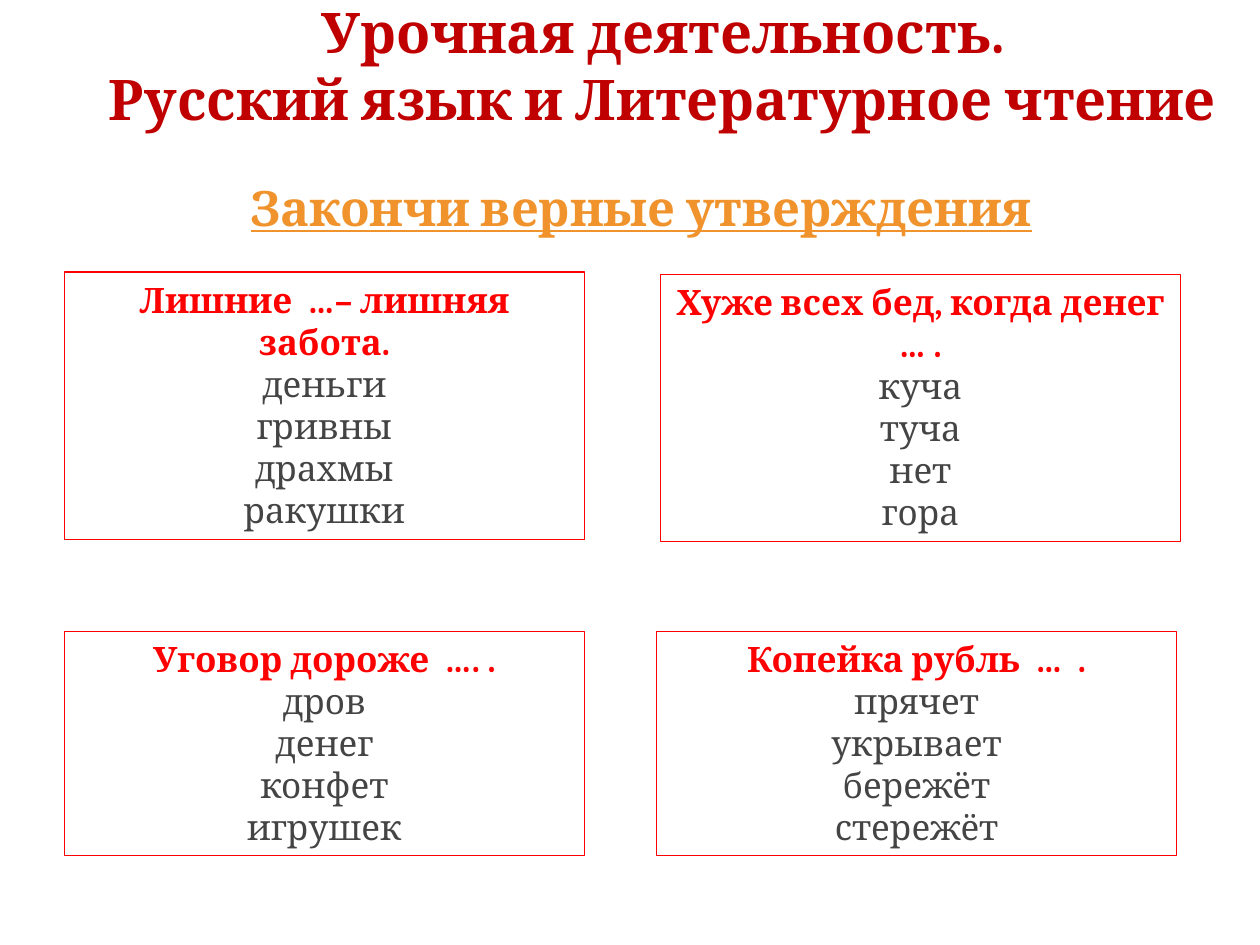
from pptx import Presentation
from pptx.dml.color import RGBColor
from pptx.enum.shapes import MSO_SHAPE as Shape
from pptx.enum.text import MSO_ANCHOR as Anchor, MSO_AUTO_SIZE as AutoSize, PP_ALIGN as Align
from pptx.oxml.ns import qn
from pptx.util import Inches, Pt

RED, GREY = "FF0000", "454445"


def color(value):
    return RGBColor.from_string(value)


def write(shape, lines, size, first_color, rest_color, anchor):
    """Fill a shape with centred Cambria lines; lines in first_color are bold."""
    frame = shape.text_frame
    frame.text = "\n".join(lines)
    frame.word_wrap = True
    frame.auto_size = AutoSize.NONE
    frame.vertical_anchor = anchor
    for index, paragraph in enumerate(frame.paragraphs):
        paragraph.alignment = Align.CENTER
        paragraph.space_before = Pt(0)
        line_color = rest_color if index else first_color
        for run in paragraph.runs:
            run.font.name = "Cambria"
            run.font.size = Pt(size)
            run.font.bold = line_color == first_color
            run.font.color.rgb = color(line_color)


presentation = Presentation()
presentation.slide_width, presentation.slide_height = Inches(10), Inches(7.5)
slide = presentation.slides.add_slide(presentation.slide_layouts[1])
title, subtitle = slide.placeholders

# Heading
title.left, title.top, title.width, title.height = map(Inches, (0.76, 0, 9, 1.03))
title.text_frame.margin_left = title.text_frame.margin_right = Inches(0.05)
write(title, ["Урочная деятельность.", "Русский язык и Литературное чтение"],
      32, "C00000", "C00000", Anchor.MIDDLE)

# Task line, without a bullet
subtitle.left, subtitle.top, subtitle.width, subtitle.height = map(Inches, (0.59, 1.39, 9, 0.5))
write(subtitle, ["Закончи верные утверждения"], 27.9, "F0932C", "F0932C", Anchor.MIDDLE)
task = subtitle.text_frame.paragraphs[0]
task.runs[0].font.underline = True
properties = task._p.get_or_add_pPr()
properties.set("marL", "0")
properties.set("indent", "0")
properties.append(properties.makeelement(qn("a:buNone"), {}))

# Proverb cards: left, top, height, proverb and its answers
cards = [
    (0.51, 2.16, 2.12, ["Лишние  …– лишняя забота.", "деньги", "гривны", "драхмы", "ракушки"]),
    (5.24, 2.18, 2.12, ["Хуже всех бед, когда денег … .", "куча", "туча", "нет", "гора"]),
    (0.51, 5.01, 1.78, ["Уговор дороже  …. .", "дров", "денег", "конфет", "игрушек"]),
    (5.21, 5.01, 1.78, ["Копейка рубль  …  .", "прячет", "укрывает", "бережёт", "стережёт"]),
]
for left, top, height, lines in cards:
    card = slide.shapes.add_shape(Shape.RECTANGLE, *map(Inches, (left, top, 4.13, height)))
    card.shadow.inherit = False
    card.fill.background()
    card.line.color.rgb = color(RED)
    card.line.width = Pt(0.75)
    write(card, lines, 20, RED, GREY, Anchor.TOP)

presentation.save("out.pptx")
